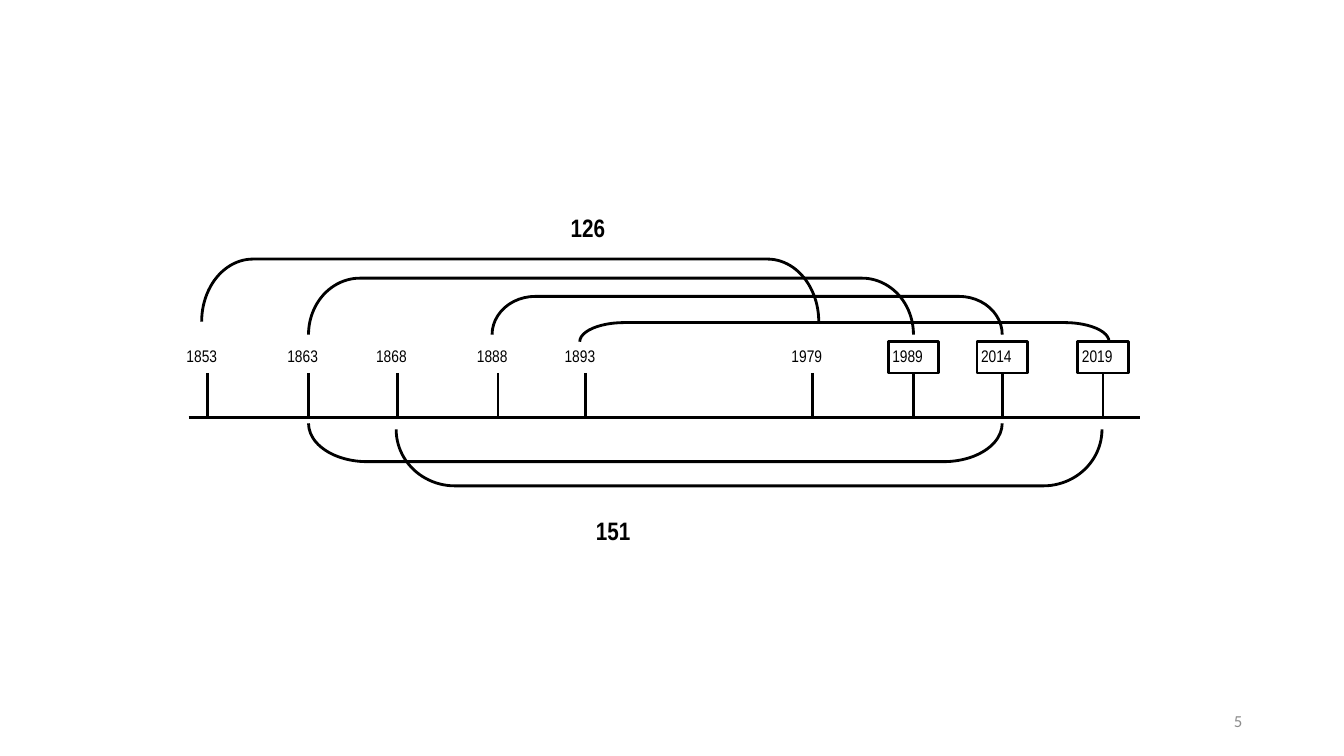
from typing import NamedTuple

from lxml.etree import SubElement
from pptx import Presentation
from pptx.dml.color import RGBColor
from pptx.enum.shapes import MSO_CONNECTOR as Connector, MSO_SHAPE as Shape
from pptx.enum.text import MSO_ANCHOR as Anchor, PP_ALIGN as Align
from pptx.oxml.ns import qn
from pptx.util import Inches, Pt

COLORS = {"ink": "000000", "page_number": "8C8C8C"}
LINE_WIDTH = Pt(2)
AXIS_LEFT, AXIS_RIGHT, AXIS_Y = 1.87, 11.31, 4.14
YEAR_WIDTH, YEAR_HEIGHT, YEAR_TOP = 0.5, 0.31, 3.39

MARGINS = ("margin_left", "margin_right", "margin_top", "margin_bottom")
LABEL_FRAME = {"word_wrap": True, "vertical_anchor": Anchor.TOP,
               **dict.fromkeys(MARGINS, Inches(0.04))}
PAGE_FRAME = {"word_wrap": True, "vertical_anchor": Anchor.MIDDLE}
YEAR_FONT = {"name": "Arial Narrow", "size": Pt(12), "bold": False}
SPAN_FONT = {"name": "Arial Narrow", "size": Pt(18), "bold": True}
PAGE_FONT = {"name": "Calibri", "size": Pt(12), "bold": False}


class Year(NamedTuple):
    text: str
    x: float
    boxed: bool = False


class Bracket(NamedTuple):
    """Extent as seen on the slide; curve is the corner adjustment."""
    left: float
    top: float
    width: float
    height: float
    curve: float
    rotation: int


class Label(NamedTuple):
    text: str
    left: float
    top: float
    width: float
    height: float


YEARS = [
    Year("1853", 2.06), Year("1863", 3.06), Year("1868", 3.94),
    Year("1888", 4.94), Year("1893", 5.81), Year("1979", 8.06),
    Year("1989", 9.06, True), Year("2014", 9.94, True),
    Year("2019", 10.94, True),
]
ABOVE, BELOW = 90, 270
BRACKETS = [
    Bracket(2.0, 2.57, 6.12, 0.62, 0.82, ABOVE),
    Bracket(3.06, 2.76, 6.0, 0.56, 0.91, ABOVE),
    Bracket(4.88, 2.94, 5.06, 0.38, 1.13, ABOVE),
    Bracket(5.75, 3.2, 5.25, 0.19, 2.33, ABOVE),
    Bracket(3.06, 4.2, 6.88, 0.38, 1.53, BELOW),
    Bracket(3.93, 4.26, 7.0, 0.56, 1.04, BELOW),
]
SPANS = [Label("126", 5.62, 2.07, 1.25, 0.38),
         Label("151", 5.87, 5.07, 1.25, 0.44)]
PAGE_NUMBER = Label("5", 9.42, 6.95, 3, 0.4)


def apply_format(target, values: dict) -> None:
    for attribute, value in values.items():
        setattr(target, attribute, value)


def ink_line(part) -> None:
    part.line.color.rgb = RGBColor.from_string(COLORS["ink"])
    part.line.width = LINE_WIDTH


def add_line(slide, x1: float, y1: float, x2: float, y2: float) -> None:
    line = slide.shapes.add_connector(
        Connector.STRAIGHT, Inches(x1), Inches(y1), Inches(x2), Inches(y2))
    ink_line(line)
    SubElement(line._element.spPr, qn("a:effectLst"))


def add_outline(slide, kind: Shape, left: float, top: float,
                width: float, height: float):
    outline = slide.shapes.add_shape(
        kind, Inches(left), Inches(top), Inches(width), Inches(height))
    outline.shadow.inherit = False
    outline.fill.background()
    ink_line(outline)
    return outline


def add_bracket(slide, bracket: Bracket) -> None:
    # A quarter turn swaps the sides around the same centre
    shift = (bracket.width - bracket.height) / 2
    arc = add_outline(slide, Shape.LEFT_BRACKET, bracket.left + shift,
                      bracket.top - shift, bracket.height, bracket.width)
    arc.rotation = bracket.rotation
    arc.adjustments[0] = bracket.curve


def write(frame, text: str, font: dict, frame_format: dict = LABEL_FRAME,
          color: str = "ink", align: Align = Align.LEFT) -> None:
    apply_format(frame, frame_format)
    paragraph = frame.paragraphs[0]
    paragraph.alignment = align
    run = paragraph.add_run()
    run.text = text
    apply_format(run.font, font)
    run.font.color.rgb = RGBColor.from_string(COLORS[color])


def add_label(slide, label: Label, font: dict, **options) -> None:
    box = slide.shapes.add_textbox(*(Inches(length) for length in label[1:]))
    write(box.text_frame, label.text, font, **options)


def add_year(slide, year: Year) -> None:
    label = Label(year.text, year.x - YEAR_WIDTH / 2, YEAR_TOP,
                  YEAR_WIDTH, YEAR_HEIGHT)
    if year.boxed:
        frame = add_outline(slide, Shape.RECTANGLE, *label[1:])
        write(frame.text_frame, year.text, YEAR_FONT)
    else:
        add_label(slide, label, YEAR_FONT)
    add_line(slide, year.x, YEAR_TOP + YEAR_HEIGHT, year.x, AXIS_Y)


def main() -> None:
    deck = Presentation()
    deck.slide_width, deck.slide_height = Inches(13.33), Inches(7.5)
    slide = deck.slides.add_slide(deck.slide_layouts[6])

    # Page number
    add_label(slide, PAGE_NUMBER, PAGE_FONT, frame_format=PAGE_FRAME,
              color="page_number", align=Align.RIGHT)

    # Time axis with its years
    add_line(slide, AXIS_LEFT, AXIS_Y, AXIS_RIGHT, AXIS_Y)
    for year in YEARS:
        add_year(slide, year)

    # Brackets joining years, and the length of the spans
    for bracket in BRACKETS:
        add_bracket(slide, bracket)
    for span in SPANS:
        add_label(slide, span, SPAN_FONT)

    deck.save("out.pptx")


if __name__ == "__main__":
    main()
